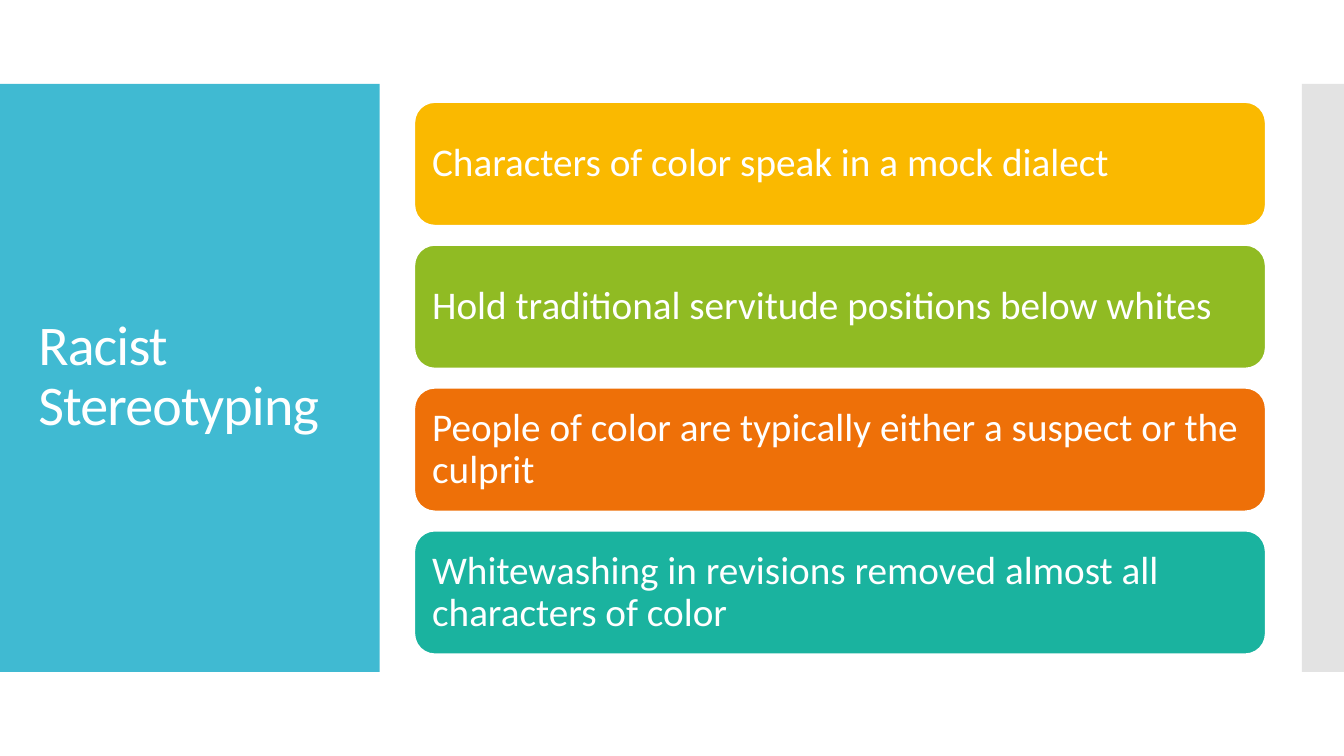
"""Build the Racist Stereotyping slide."""
from lxml.etree import SubElement
from pptx import Presentation
from pptx.dml.color import RGBColor
from pptx.enum.shapes import MSO_SHAPE
from pptx.enum.text import MSO_ANCHOR, MSO_AUTO_SIZE, PP_ALIGN
from pptx.oxml.ns import qn
from pptx.util import Cm, Pt

TITLE = "Racist Stereotyping"
POINTS = [
    ("Characters of color speak in a mock dialect", "FAB900"),
    ("Hold traditional servitude positions below whites", "90BB23"),
    ("People of color are typically either a suspect or the culprit", "EE7008"),
    ("Whitewashing in revisions removed almost all characters of color", "1AB39F"),
]
WHITE, PANEL_BLUE, STRIP_GRAY = "FFFFFF", "40BAD2", "C8C8C8"
SLIDE_WIDTH, SLIDE_HEIGHT = 33.87, 19.05
PANEL_HEIGHT, PANEL_WIDTH, STRIP_WIDTH = 14.82, 9.57, 1.06
PANEL_TOP = (SLIDE_HEIGHT - PANEL_HEIGHT) / 2
CARD_LEFT, CARD_TOP, CARD_WIDTH, CARD_HEIGHT = 10.44, 2.57, 21.46, 3.12
CARD_PITCH = 3.6
FRAME = {"word_wrap": True, "auto_size": MSO_AUTO_SIZE.NONE,
         "vertical_anchor": MSO_ANCHOR.MIDDLE}
CARD_MARGINS = {f"margin_{side}": Cm(0.3) for side in ("left", "top", "right", "bottom")}
PARAGRAPH = {"alignment": PP_ALIGN.LEFT, "line_spacing": 0.9}


def color(value):
    return RGBColor.from_string(value)


def apply(target, values):
    for name, value in values.items():
        setattr(target, name, value)


def add_block(page, kind, left, top, width, height, fill):
    block = page.shapes.add_shape(kind, Cm(left), Cm(top), Cm(width), Cm(height))
    block.shadow.inherit = False
    block.fill.solid()
    block.fill.fore_color.rgb = color(fill)
    block.line.fill.background()
    return block


def write(box, text, size, margins):
    apply(box.text_frame, FRAME | margins)
    para = box.text_frame.paragraphs[0]
    apply(para, PARAGRAPH)
    span = para.add_run()
    span.text = text
    apply(span.font, {"name": "Calibri", "size": Pt(size)})
    span.font.color.rgb = color(WHITE)
    return span


def main():
    deck = Presentation()
    apply(deck, {"slide_width": Cm(SLIDE_WIDTH), "slide_height": Cm(SLIDE_HEIGHT)})
    page = deck.slides.add_slide(deck.slide_layouts[5])

    title = page.shapes.title
    apply(title, {"left": Cm(0.71), "top": Cm(3.12), "width": Cm(8.18), "height": Cm(12.78)})
    title_span = write(title, TITLE, 40, {})
    title_span.font._element.set("spc", "-60")

    panel = add_block(page, MSO_SHAPE.RECTANGLE, 0, PANEL_TOP,
                      PANEL_WIDTH, PANEL_HEIGHT, PANEL_BLUE)
    strip = add_block(page, MSO_SHAPE.RECTANGLE, SLIDE_WIDTH - STRIP_WIDTH, PANEL_TOP,
                      STRIP_WIDTH, PANEL_HEIGHT, STRIP_GRAY)
    strip_color = strip.element.spPr.find(f"{qn('a:solidFill')}/{qn('a:srgbClr')}")
    SubElement(strip_color, qn("a:alpha"), val="50000")
    for block in (panel, strip):
        title.element.addprevious(block.element)

    for index, (text, fill) in enumerate(POINTS):
        card = add_block(page, MSO_SHAPE.ROUNDED_RECTANGLE, CARD_LEFT,
                         CARD_TOP + index * CARD_PITCH, CARD_WIDTH, CARD_HEIGHT, fill)
        card.line.color.rgb = color(WHITE)
        card.line.width = Pt(1.35)
        write(card, text, 28, CARD_MARGINS)

    deck.save("out.pptx")


if __name__ == "__main__":
    main()
